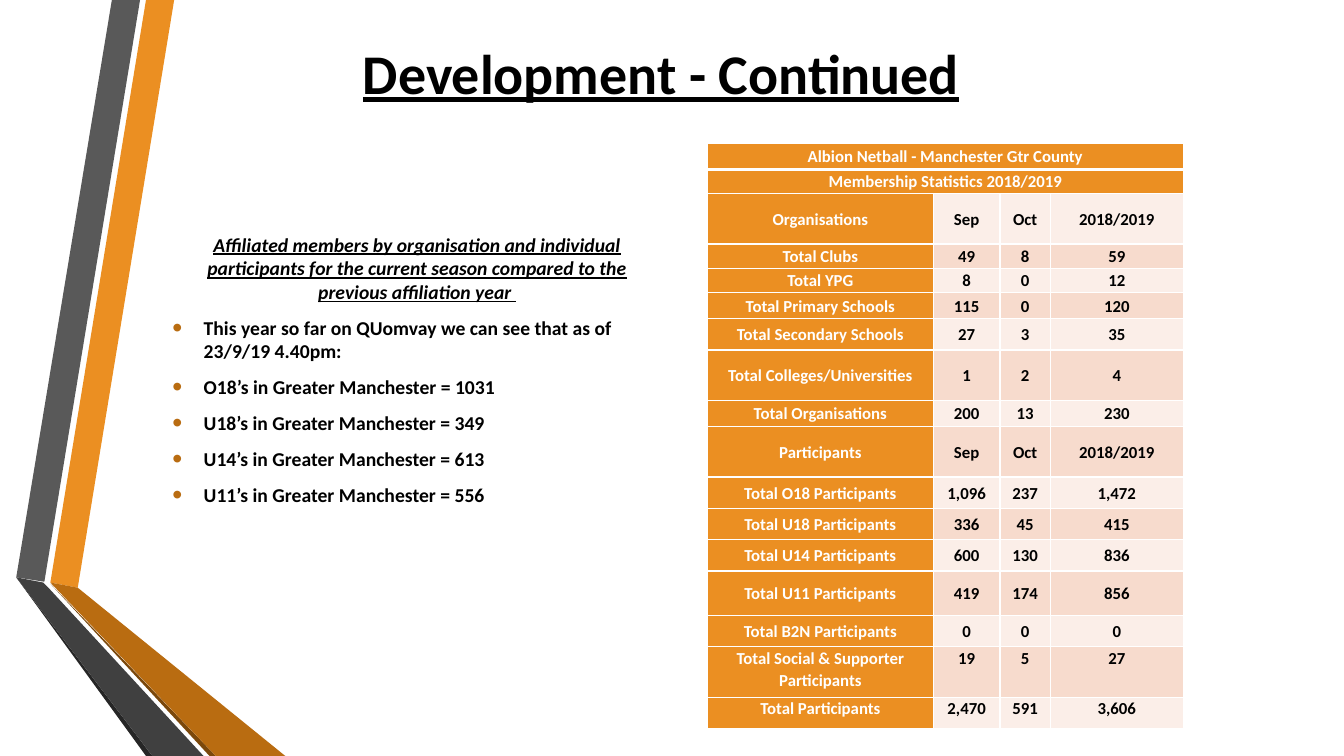
from collections import namedtuple

from lxml.etree import SubElement
from pptx import Presentation
from pptx.dml.color import RGBColor
from pptx.enum.text import MSO_AUTO_SIZE as AutoSize, MSO_VERTICAL_ANCHOR as Anchor, PP_ALIGN as Align
from pptx.oxml.ns import qn
from pptx.util import Cm, Pt

Box = namedtuple("Box", "left top width height")

COLOURS = {
    "orange": "EB8F22", "brown": "B96C11", "dark_brown": "7B480B",
    "grey": "595959", "charcoal": "404040", "near_black": "262626",
    "black": "000000", "white": "FFFFFF",
    "light_band": "FBEEE8", "dark_band": "F7DBCD",
}

RIBBONS = [
    ("orange", [(0.86, 14.68), (1.55, 14.81), (3.98, 0), (3.27, 0)]),
    ("grey", [(3.12, 0), (2.41, 0), (0, 14.55), (0.71, 14.66)]),
    ("near_black", [(0, 14.55), (3.27, 19.05), (3.43, 19.05)]),
    ("dark_brown", [(0.86, 14.71), (4.87, 19.05), (5.03, 19.05)]),
    ("brown", [(0.86, 14.68), (5.03, 19.05), (6.78, 19.05), (1.55, 14.81)]),
    ("charcoal", [(4.72, 19.05), (0.81, 14.81), (0.68, 14.68), (0, 14.55), (3.43, 19.05)]),
]

HEADING = ("Affiliated members by organisation and individual participants for the "
           "current season compared to the previous affiliation year ")
FINDINGS = [
    "This year so far on QUomvay we can see that as of 23/9/19 4.40pm:",
    "O18’s in Greater Manchester = 1031",
    "U18’s in Greater Manchester = 349",
    "U14’s in Greater Manchester = 613",
    "U11’s in Greater Manchester = 556",
]

COLUMN_WIDTHS = [5.69, 1.68, 1.27, 3.35]
STATISTICS = [
    (0.66, ["Albion Netball - Manchester Gtr County"]),
    (0.61, ["Membership Statistics 2018/2019"]),
    (1.27, ["Organisations", "Sep", "Oct", "2018/2019"]),
    (0.61, ["Total Clubs", "49", "8", "59"]),
    (0.61, ["Total YPG", "8", "0", "12"]),
    (0.66, ["Total Primary Schools", "115", "0", "120"]),
    (0.79, ["Total Secondary Schools", "27", "3", "35"]),
    (1.27, ["Total Colleges/Universities", "1", "2", "4"]),
    (0.66, ["Total Organisations", "200", "13", "230"]),
    (1.27, ["Participants", "Sep", "Oct", "2018/2019"]),
    (0.79, ["Total O18 Participants", "1,096", "237", "1,472"]),
    (0.79, ["Total U18 Participants", "336", "45", "415"]),
    (0.79, ["Total U14 Participants", "600", "130", "836"]),
    (1.12, ["Total U11 Participants", "419", "174", "856"]),
    (0.79, ["Total B2N Participants", "0", "0", "0"]),
    (1.27, ["Total Social & Supporter Participants", "19", "5", "27"]),
    (0.79, ["Total Participants", "2,470", "591", "3,606"]),
]
TOP_ALIGNED_FROM = len(STATISTICS) - 2


def colour(name):
    """Return the named palette colour."""
    return RGBColor.from_string(COLOURS[name])


def format_runs(paragraph, size, ink="black", italic=False, underline=False):
    """Apply the slide's bold Calibri to every run of a paragraph."""
    for run in paragraph.runs:
        font = run.font
        font.name, font.size, font.bold = "Calibri", Pt(size), True
        font.italic, font.underline = italic, underline
        font.color.rgb = colour(ink)


def place(placeholder, box):
    """Move a placeholder to a box and centre its text vertically."""
    placeholder.left, placeholder.top, placeholder.width, placeholder.height = map(Cm, box)
    frame = placeholder.text_frame
    frame.word_wrap, frame.auto_size = True, AutoSize.NONE
    frame.vertical_anchor = Anchor.MIDDLE
    return frame


def add_ribbons(slide, box):
    """Draw the folded ribbons from the top left corner of the box."""
    ribbons = slide.shapes.add_group_shape()
    for fill, outline in RIBBONS:
        corners = [(Cm(box.left + x), Cm(box.top + y)) for x, y in outline]
        builder = ribbons.shapes.build_freeform(*corners[0])
        builder.add_line_segments(corners[1:], close=True)
        ribbon = builder.convert_to_shape()
        ribbon.shadow.inherit = False
        ribbon.fill.solid()
        ribbon.fill.fore_color.rgb = colour(fill)
        ribbon.line.fill.background()


def add_title(slide, box):
    """Write the underlined title."""
    frame = place(slide.shapes.title, box)
    frame.text = "Development - Continued"
    title = frame.paragraphs[0]
    title.alignment = Align.CENTER
    format_runs(title, 40, underline=True)


def set_bullet(paragraph):
    """Give a paragraph a hanging brown bullet."""
    properties = paragraph._p.get_or_add_pPr()
    properties.set("marL", str(Cm(0.79)))
    properties.set("indent", str(-Cm(0.79)))
    bullet_colour = SubElement(properties, qn("a:buClr"))
    SubElement(bullet_colour, qn("a:srgbClr"), val=COLOURS["brown"])
    SubElement(properties, qn("a:buSzPct"), val="145000")
    SubElement(properties, qn("a:buFont"), typeface="Arial")
    SubElement(properties, qn("a:buChar"), char="•")


def add_findings(slide, box):
    """Write the heading and the bulleted membership findings."""
    frame = place(slide.placeholders[1], box)
    frame.text = "\n".join([HEADING, *FINDINGS])
    for paragraph in frame.paragraphs:
        paragraph.line_spacing = 1.0
        paragraph.space_before, paragraph.space_after = Pt(2.8), Pt(6)
    heading, *findings = frame.paragraphs
    heading.alignment = Align.CENTER
    properties = heading._p.get_or_add_pPr()
    properties.set("marL", "0")
    properties.set("indent", "0")
    SubElement(properties, qn("a:buNone"))
    format_runs(heading, 14, italic=True, underline=True)
    for finding in findings:
        finding.alignment = Align.LEFT
        set_bullet(finding)
        format_runs(finding, 14)


def set_borders(cell, top, bottom):
    """Give a cell white borders, with the top and bottom widths in points."""
    properties = cell._tc.get_or_add_tcPr()
    for side, width in (("L", 1), ("R", 1), ("T", top), ("B", bottom)):
        border = SubElement(properties, qn(f"a:ln{side}"), w=str(Pt(width)))
        fill = SubElement(border, qn("a:solidFill"))
        SubElement(fill, qn("a:srgbClr"), val=COLOURS["white"])


def format_cell(cell, row, column):
    """Format one statistics cell by its row and column."""
    is_label = column == 0 or row < 2
    set_borders(cell, 3 if row == 1 else 1, 3 if row == 0 else 1)
    band = "dark_band" if row % 2 else "light_band"
    cell.fill.solid()
    cell.fill.fore_color.rgb = colour("orange" if is_label else band)
    cell.margin_left = cell.margin_right = Cm(0.03)
    cell.margin_top = cell.margin_bottom = Cm(0)
    cell.vertical_anchor = Anchor.TOP if row >= TOP_ALIGNED_FROM else Anchor.MIDDLE
    entry = cell.text_frame.paragraphs[0]
    entry.alignment, entry.line_spacing = Align.CENTER, 1.07
    format_runs(entry, 12, "white" if is_label else "black")


def add_statistics(slide, box):
    """Fill the membership table, merging rows that hold one entry."""
    statistics = slide.shapes.add_table(
        len(STATISTICS), len(COLUMN_WIDTHS), *map(Cm, box)).table
    for column, width in zip(statistics.columns, COLUMN_WIDTHS):
        column.width = Cm(width)
    for row, (height, entries) in enumerate(STATISTICS):
        statistics.rows[row].height = Cm(height)
        for column, entry in enumerate(entries):
            statistics.cell(row, column).text = entry
        for column in range(len(COLUMN_WIDTHS)):
            format_cell(statistics.cell(row, column), row, column)
        if len(entries) == 1:
            statistics.cell(row, 0).merge(statistics.cell(row, len(COLUMN_WIDTHS) - 1))


def main():
    """Build and save the slide."""
    deck = Presentation()
    deck.slide_width, deck.slide_height = Cm(33.87), Cm(19.05)
    slide = deck.slides.add_slide(deck.slide_layouts[1])
    add_ribbons(slide, Box(0.41, 0, 6.78, 19.05))
    add_title(slide, Box(3.96, 0, 25.4, 3.61))
    add_findings(slide, Box(4.09, 3.61, 12.85, 11.4))
    add_statistics(slide, Box(17.83, 3.61, 11.99, 14.75))
    deck.save("out.pptx")


if __name__ == "__main__":
    main()
